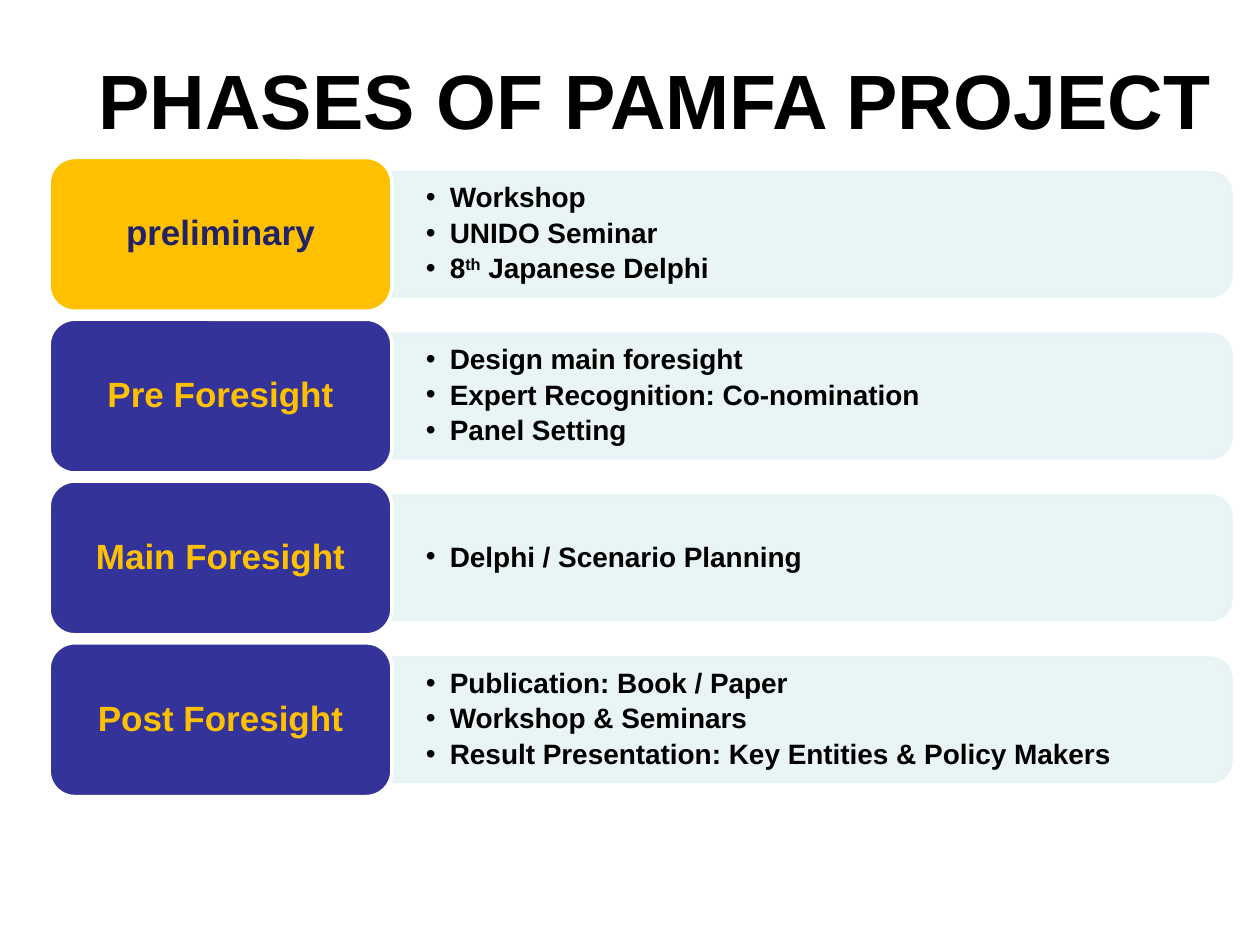
from dataclasses import dataclass

from lxml.etree import SubElement
from pptx import Presentation
from pptx.dml.color import RGBColor
from pptx.enum.shapes import MSO_SHAPE as Shape
from pptx.enum.text import MSO_ANCHOR as Anchor, MSO_AUTO_SIZE as AutoSize, PP_ALIGN as Align
from pptx.oxml.ns import qn
from pptx.util import Inches, Pt


@dataclass(frozen=True)
class Theme:
    font: str = "Arial"
    black: str = "000000"
    white: str = "FFFFFF"
    amber: str = "FFC000"
    indigo: str = "333399"
    navy: str = "222267"
    pale: str = "E7F3F4"
    title_size: int = 44
    label_size: int = 20
    item_size: int = 16
    line_width: int = 2
    line_spacing: float = 0.9


THEME = Theme()
LEFT, TOP = 0.39, 1.25
LABEL_WIDTH, LABEL_HEIGHT = 2.72, 1.22
BAR_WIDTH, BAR_HEIGHT = 6.66, 0.98
ROW_PITCH = 1.284
BULLET_INDENT = 0.19

PHASES = [
    ("preliminary", THEME.amber, THEME.navy,
     ["Workshop", "UNIDO Seminar", ("8", "th", " Japanese Delphi")]),
    ("Pre Foresight", THEME.indigo, THEME.amber,
     ["Design main foresight", "Expert Recognition: Co-nomination", "Panel Setting"]),
    ("Main Foresight", THEME.indigo, THEME.amber, ["Delphi / Scenario Planning"]),
    ("Post Foresight", THEME.indigo, THEME.amber,
     ["Publication: Book / Paper", "Workshop & Seminars",
      "Result Presentation: Key Entities & Policy Makers"]),
]


def style_paragraph(paragraph, size, color, align):
    paragraph.alignment = align
    font = paragraph.font
    font.name, font.size, font.bold = THEME.font, Pt(size), True
    font.color.rgb = RGBColor.from_string(color)


def set_frame(frame, anchor, horizontal, vertical):
    frame.word_wrap = True
    frame.auto_size = AutoSize.NONE
    frame.vertical_anchor = anchor
    frame.margin_left = frame.margin_right = Inches(horizontal)
    frame.margin_top = frame.margin_bottom = Inches(vertical)


def add_box(slide, kind, box, fill, line):
    shape = slide.shapes.add_shape(kind, *map(Inches, box))
    shape.shadow.inherit = False
    shape.fill.solid()
    shape.fill.fore_color.rgb = RGBColor.from_string(fill)
    shape.line.color.rgb = RGBColor.from_string(line)
    shape.line.width = Pt(THEME.line_width)
    return shape


def set_opacity(shape, percent):
    for color in shape.element.spPr.iter(qn("a:srgbClr")):
        SubElement(color, qn("a:alpha"), val=str(percent * 1000))


def add_bullet(paragraph):
    properties = paragraph._p.get_or_add_pPr()
    properties.set("marL", str(Inches(BULLET_INDENT)))
    properties.set("indent", str(-Inches(BULLET_INDENT)))
    SubElement(properties, qn("a:buFont"), typeface=THEME.font)
    SubElement(properties, qn("a:buChar"), char="•")


def add_title(slide, text):
    title = slide.shapes.title
    title.left, title.top, title.width, title.height = map(Inches, (0.55, 0.31, 9.3, 1.09))
    set_frame(title.text_frame, Anchor.TOP, 0.1, 0.11)
    title.text_frame.text = text
    style_paragraph(title.text_frame.paragraphs[0], THEME.title_size, THEME.black, Align.CENTER)


def add_bar(slide, left, middle):
    box = (left + (BAR_WIDTH - BAR_HEIGHT) / 2, middle - BAR_WIDTH / 2, BAR_HEIGHT, BAR_WIDTH)
    bar = add_box(slide, Shape.ROUND_2_SAME_RECTANGLE, box, THEME.pale, THEME.pale)
    bar.rotation = 90
    set_opacity(bar, 90)


def add_items(slide, left, middle, items):
    height = BAR_HEIGHT - 0.1
    box = (left, middle - height / 2, BAR_WIDTH - 0.05, height)
    frame = slide.shapes.add_textbox(*map(Inches, box)).text_frame
    set_frame(frame, Anchor.MIDDLE, 0.27, 0.14)
    for index, item in enumerate(items):
        paragraph = frame.add_paragraph() if index else frame.paragraphs[0]
        add_bullet(paragraph)
        style_paragraph(paragraph, THEME.item_size, THEME.black, Align.LEFT)
        paragraph.line_spacing = THEME.line_spacing
        paragraph.space_after = Pt(3)
        parts = (item,) if isinstance(item, str) else item
        for position, part in enumerate(parts):
            run = paragraph.add_run()
            run.text = part
            if position == 1:
                run.font._element.set("baseline", "30000")


def add_label(slide, top, text, fill, color):
    box = (LEFT, top, LABEL_WIDTH, LABEL_HEIGHT)
    label = add_box(slide, Shape.ROUNDED_RECTANGLE, box, fill, THEME.white)
    set_frame(label.text_frame, Anchor.MIDDLE, 0.08, 0.04)
    label.text_frame.text = text
    paragraph = label.text_frame.paragraphs[0]
    style_paragraph(paragraph, THEME.label_size, color, Align.CENTER)
    paragraph.line_spacing = THEME.line_spacing


def main():
    presentation = Presentation()
    presentation.slide_width, presentation.slide_height = Inches(10), Inches(7.5)
    slide = presentation.slides.add_slide(presentation.slide_layouts[5])
    add_title(slide, "PHASES OF PAMFA PROJECT")
    for row, (name, fill, color, items) in enumerate(PHASES):
        top = TOP + row * ROW_PITCH
        middle = top + LABEL_HEIGHT / 2
        add_bar(slide, LEFT + LABEL_WIDTH, middle)
        add_items(slide, LEFT + LABEL_WIDTH, middle, items)
        add_label(slide, top, name, fill, color)
    presentation.save("out.pptx")


if __name__ == "__main__":
    main()
